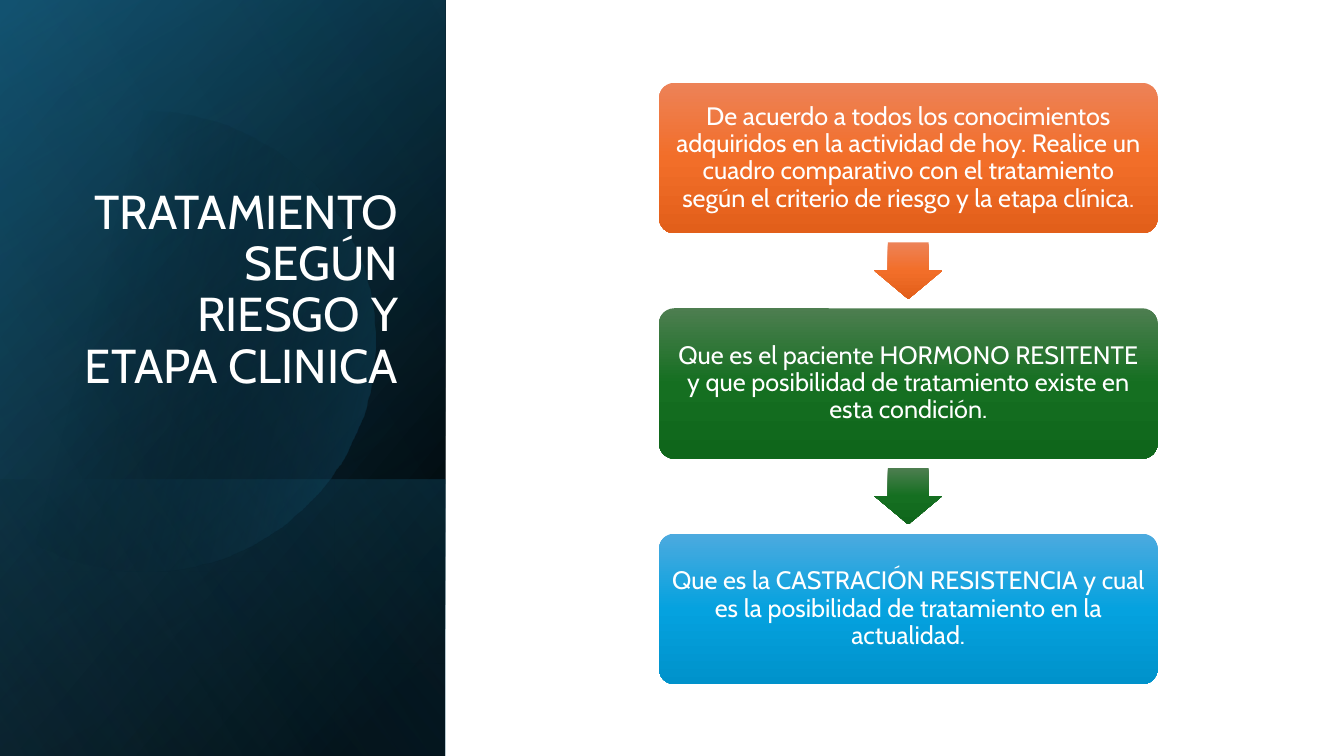
import math
from dataclasses import dataclass

from lxml import etree
from pptx import Presentation
from pptx.dml.color import RGBColor
from pptx.enum import shapes, text
from pptx.oxml import ns
from pptx.util import Pt

# Content
TITLE = "TRATAMIENTO SEGÚN RIESGO Y ETAPA CLINICA"
STEPS = [
    ("De acuerdo a todos los conocimientos adquiridos en la actividad de hoy. "
     "Realice un cuadro comparativo con el tratamiento según el criterio de "
     "riesgo y la etapa clínica.", "orange"),
    ("Que es el paciente HORMONO RESITENTE y que posibilidad de tratamiento "
     "existe en esta condición.", "green"),
    ("Que es la CASTRACIÓN RESISTENCIA y cual es la posibilidad de "
     "tratamiento en la actualidad.", "blue"),
]


@dataclass(frozen=True)
class Theme:
    font: str = "Cabin"
    title_size: int = 34
    step_size: int = 18
    line_spacing: float = 0.9
    white: str = "FFFFFF"
    black: str = "000000"
    navy: str = "104862"
    teal: str = "156082"
    sky: str = "46B1E1"
    orange: tuple = ("ED8257", "F26E29", "E25F1A")
    green: tuple = ("4D7E50", "156F21", "0F661B")
    blue: tuple = ("4CAADF", "05A2DF", "0092CB")


THEME = Theme()

# Layout, in points
PAGE_W, PAGE_H = 960, 540
PANEL_W = 318
BAND_H = 197.3
DISC_X, DISC_Y, DISC_R = 103.7, 243.4, 164.2
TITLE_BOX = (46, 132.5, 245.5, 188.6)
TITLE_BOTTOM = 40
STEP_X, STEP_Y, STEP_W, STEP_H, STEP_PITCH = 470.8, 59.2, 356, 107.4, 161
ARROW_W, ARROW_H = 48.4, 40.4

# Panel layers: height (from the foot of the page), angle,
# then stops of position, colour and opacity in percent
BASE_LAYERS = [
    (PAGE_H, 50, [(8, THEME.black, 100), (100, THEME.navy, 100)]),
    (PAGE_H, 30, [(0, THEME.black, 0), (99, THEME.teal, 46)]),
    (BAND_H, 130, [(2, THEME.teal, 29), (100, THEME.black, 30)]),
]
DISC_STOPS = [(29, THEME.black, 0), (100, THEME.teal, 43)]
TOP_LAYER = (PAGE_H, 120, [(0, THEME.black, 0), (99, THEME.sky, 11)])


def fill_gradient(shape, angle, stops):
    """Give a shape a linear gradient, with no line and no shadow."""
    shape.shadow.inherit = False
    shape.line.fill.background()
    shape.fill.background()
    blank = shape._element.spPr.find(ns.qn("a:noFill"))
    gradient = etree.Element(ns.qn("a:gradFill"), rotWithShape="1")
    stop_list = etree.SubElement(gradient, ns.qn("a:gsLst"))
    for position, colour, opacity in stops:
        stop = etree.SubElement(stop_list, ns.qn("a:gs"), pos=str(position * 1000))
        rgb = etree.SubElement(stop, ns.qn("a:srgbClr"), val=colour)
        if opacity < 100:
            etree.SubElement(rgb, ns.qn("a:alpha"), val=str(opacity * 1000))
    etree.SubElement(gradient, ns.qn("a:lin"), ang=str(angle * 60000), scaled="0")
    blank.getparent().replace(blank, gradient)


def add_shape(page, kind, left, top, width, height):
    return page.shapes.add_shape(kind, Pt(left), Pt(top), Pt(width), Pt(height))


def add_panel_layer(page, height, angle, stops):
    """Add a mirrored rectangle on its side, so that its gradient turns with it."""
    left = (PANEL_W - height) / 2
    top = PAGE_H - height / 2 - PANEL_W / 2
    layer = add_shape(page, shapes.MSO_SHAPE.RECTANGLE, left, top, height, PANEL_W)
    layer.rotation = 90
    layer._element.spPr.xfrm.set("flipH", "1")
    fill_gradient(layer, angle, stops)


def add_disc(page):
    """Add the large disc, cut off at the left edge of the page."""
    limit = math.acos(-DISC_X / DISC_R)
    steps = 120
    turns = [limit * (2 * i / steps - 1) for i in range(steps + 1)]
    points = [(max(0, DISC_X + DISC_R * math.cos(turn)),
               DISC_Y + DISC_R * math.sin(turn)) for turn in turns]
    builder = page.shapes.build_freeform(*points[0], scale=Pt(1))
    builder.add_line_segments(points[1:], close=True)
    fill_gradient(builder.convert_to_shape(), 14, DISC_STOPS)


def write(frame, words, size, align, anchor):
    frame.word_wrap = True
    frame.auto_size = text.MSO_AUTO_SIZE.NONE
    frame.vertical_anchor = anchor
    para = frame.paragraphs[0]
    para.text = words
    para.alignment = align
    para.line_spacing = THEME.line_spacing
    para.font.name = THEME.font
    para.font.size = Pt(size)
    para.font.color.rgb = RGBColor.from_string(THEME.white)


def add_title(page):
    title = page.shapes.title
    title.left, title.top, title.width, title.height = map(Pt, TITLE_BOX)
    write(title.text_frame, TITLE, THEME.title_size,
          text.PP_ALIGN.RIGHT, text.MSO_ANCHOR.BOTTOM)
    title.text_frame.margin_bottom = Pt(TITLE_BOTTOM)
    # Bring the title in front of the panel
    page.shapes._spTree.append(title._element)


def add_step(page, index, words, colour):
    stops = [(position, rgb, 100)
             for position, rgb in zip((0, 50, 100), getattr(THEME, colour))]
    top = STEP_Y + index * STEP_PITCH
    box = add_shape(page, shapes.MSO_SHAPE.ROUNDED_RECTANGLE,
                    STEP_X, top, STEP_W, STEP_H)
    box.adjustments[0] = 0.1
    fill_gradient(box, 90, stops)
    frame = box.text_frame
    frame.margin_left = frame.margin_right = Pt(5)
    frame.margin_top = frame.margin_bottom = Pt(5)
    write(frame, words, THEME.step_size,
          text.PP_ALIGN.CENTER, text.MSO_ANCHOR.MIDDLE)

    # Arrow, centred in the gap to the next step
    if index < len(STEPS) - 1:
        gap = STEP_PITCH - STEP_H
        arrow = add_shape(page, shapes.MSO_SHAPE.DOWN_ARROW,
                          STEP_X + (STEP_W - ARROW_W) / 2,
                          top + STEP_H + (gap - ARROW_H) / 2, ARROW_W, ARROW_H)
        arrow.adjustments[0] = 0.6
        arrow.adjustments[1] = 0.5
        fill_gradient(arrow, 90, stops)


def main():
    deck = Presentation()
    deck.slide_width, deck.slide_height = Pt(PAGE_W), Pt(PAGE_H)
    page = deck.slides.add_slide(deck.slide_layouts[5])

    # Dark panel with the title
    for layer in BASE_LAYERS:
        add_panel_layer(page, *layer)
    add_disc(page)
    add_panel_layer(page, *TOP_LAYER)
    add_title(page)

    # Steps
    for index, (words, colour) in enumerate(STEPS):
        add_step(page, index, words, colour)

    deck.save("out.pptx")


if __name__ == "__main__":
    main()
